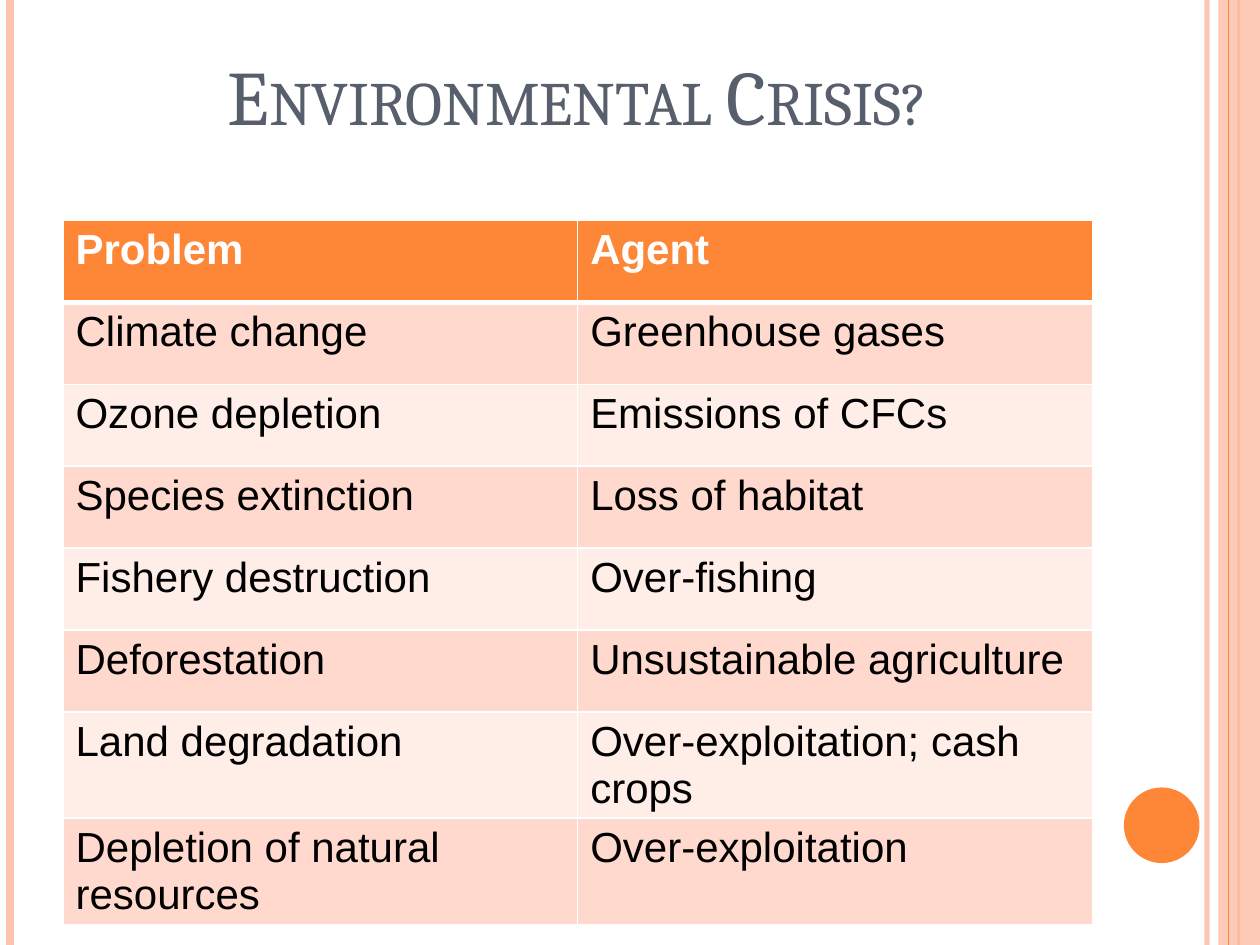
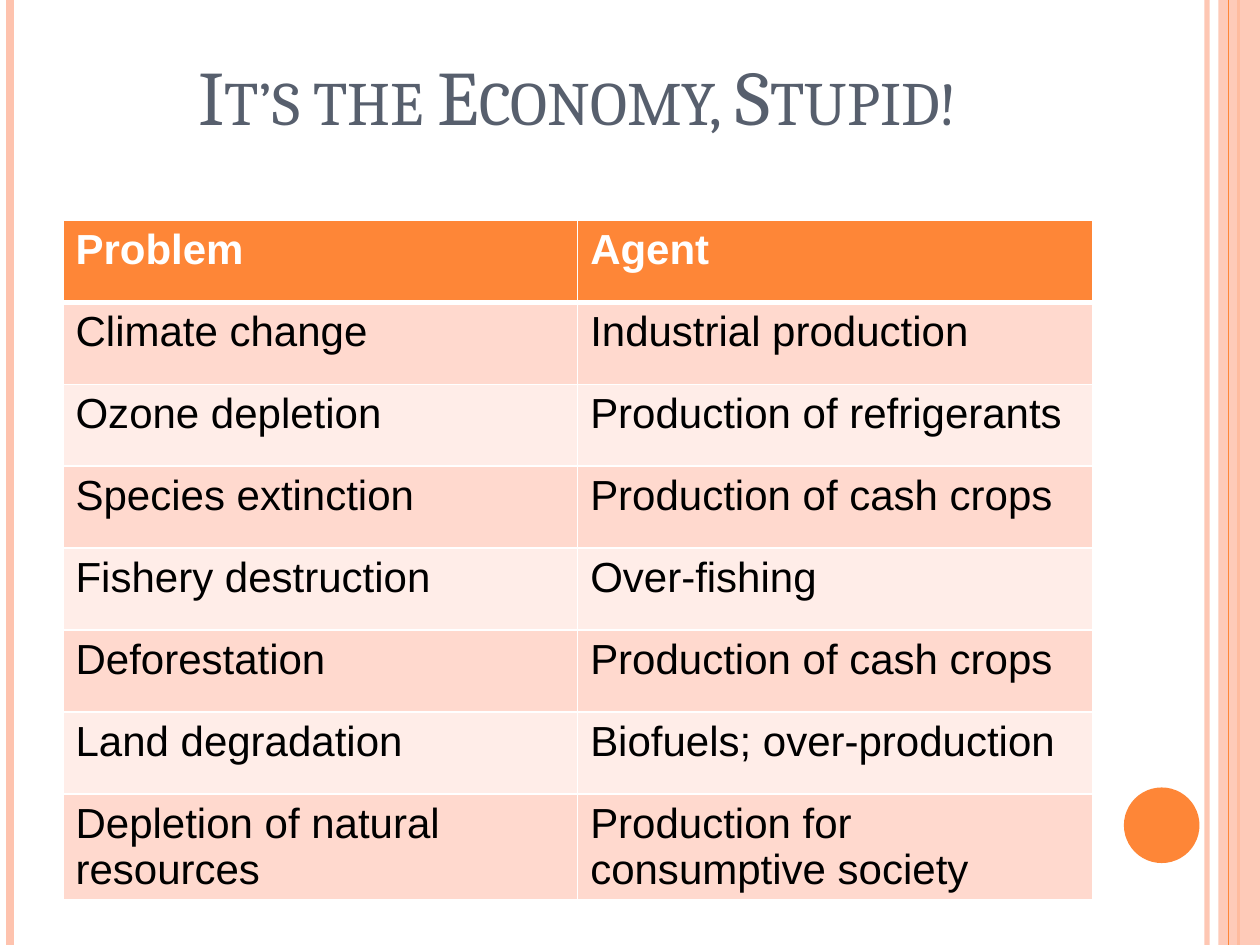
"""Build two slides that set environmental problems beside their agents."""
from lxml import etree
from pptx import Presentation
from pptx.dml.color import RGBColor
from pptx.enum import shapes, text
from pptx.oxml import ns
from pptx.util import Inches, Pt

ORANGE, PEACH, SLATE = "FE8637", "FEC3AE", "575F6D"
WHITE, BLACK = "FFFFFF", "000000"
BANDS = ("FFD9CE", "FFEDE8")
LEFT, CONTENT_WIDTH = 0.5, 8.17
SLIDE_WIDTH, SLIDE_HEIGHT = 10, 7.5
ROW_HEIGHT = 0.65

PROBLEMS = (
    "Climate change", "Ozone depletion", "Species extinction",
    "Fishery destruction", "Deforestation", "Land degradation",
    "Depletion of natural resources",
)
SLIDES = (
    ("Environmental Crisis?", (
        "Greenhouse gases", "Emissions of CFCs", "Loss of habitat",
        "Over-fishing", "Unsustainable agriculture",
        "Over-exploitation; cash crops", "Over-exploitation",
    )),
    ("It’s the Economy, Stupid!", (
        "Industrial production", "Production of refrigerants",
        "Production of cash crops", "Over-fishing",
        "Production of cash crops", "Biofuels; over-production",
        "Production for consumptive society",
    )),
)


def color(value):
    return RGBColor.from_string(value)


def set_opacity(shape, percent):
    for element in shape.element.spPr.iter(ns.qn("a:srgbClr")):
        etree.SubElement(element, ns.qn("a:alpha"), val=str(percent * 1000))


def write(frame, words, font="Arial", size=24, ink=BLACK, bold=False,
          align=text.PP_ALIGN.LEFT, small_caps=False):
    paragraph = frame.paragraphs[0]
    paragraph.alignment = align
    run = paragraph.add_run()
    run.text = words
    run.font.name = font
    run.font.size = Pt(size)
    run.font.bold = bold
    run.font.color.rgb = color(ink)
    if small_caps:
        run.font._element.set("cap", "small")


def add_stripe(slide, x, ink, width, opacity=100):
    line = slide.shapes.add_connector(
        shapes.MSO_CONNECTOR.STRAIGHT,
        Inches(x), Inches(0), Inches(x), Inches(SLIDE_HEIGHT))
    line.line.color.rgb = color(ink)
    line.line.width = Pt(width)
    etree.SubElement(line.element.spPr, ns.qn("a:effectLst"))
    if opacity < 100:
        set_opacity(line, opacity)


def add_plain_shape(slide, kind, left, top, width, height, fill, opacity=100):
    shape = slide.shapes.add_shape(
        kind, Inches(left), Inches(top), Inches(width), Inches(height))
    shape.shadow.inherit = False
    shape.fill.solid()
    shape.fill.fore_color.rgb = color(fill)
    shape.line.fill.background()
    if opacity < 100:
        set_opacity(shape, opacity)


def add_decoration(slide):
    add_stripe(slide, 9.58, PEACH, 3, opacity=93)
    add_stripe(slide, 0.08, PEACH, 4.5)
    add_stripe(slide, 9.83, ORANGE, 1.5)
    add_plain_shape(slide, shapes.MSO_SHAPE.RECTANGLE,
                    9.67, 0, 0.33, SLIDE_HEIGHT, PEACH, opacity=87)
    add_stripe(slide, 9.75, ORANGE, 0.75)
    add_plain_shape(slide, shapes.MSO_SHAPE.OVAL, 8.92, 6.25, 0.6, 0.6, ORANGE)


def set_title(slide, words):
    title = slide.shapes.title
    title.left, title.top = Inches(LEFT), Inches(0.3)
    title.width, title.height = Inches(CONTENT_WIDTH), Inches(0.87)
    frame = title.text_frame
    frame.auto_size = text.MSO_AUTO_SIZE.NONE
    frame.vertical_anchor = text.MSO_ANCHOR.BOTTOM
    write(frame, words, font="Cambria", size=44, ink=SLATE,
          align=text.PP_ALIGN.CENTER, small_caps=True)


def set_borders(cell, top=1, bottom=1):
    properties = cell._tc.get_or_add_tcPr()
    for side, width in (("L", 1), ("R", 1), ("T", top), ("B", bottom)):
        border = etree.SubElement(
            properties, ns.qn(f"a:ln{side}"), w=str(Pt(width)))
        fill = etree.SubElement(border, ns.qn("a:solidFill"))
        etree.SubElement(fill, ns.qn("a:srgbClr"), val=WHITE)


def add_problem_table(slide, agents):
    rows = [("Problem", "Agent"), *zip(PROBLEMS, agents)]
    table = slide.shapes.add_table(
        len(rows), 2, Inches(LEFT), Inches(1.75),
        Inches(CONTENT_WIDTH), Inches(ROW_HEIGHT * len(rows))).table
    table.horz_banding = False
    for row_index, row in enumerate(rows):
        header = row_index == 0
        for column_index, words in enumerate(row):
            cell = table.cell(row_index, column_index)
            set_borders(cell, top=3 if row_index == 1 else 1,
                        bottom=3 if header else 1)
            cell.fill.solid()
            cell.fill.fore_color.rgb = color(
                ORANGE if header else BANDS[(row_index - 1) % 2])
            write(cell.text_frame, words, bold=header,
                  ink=WHITE if header else BLACK)


def main():
    presentation = Presentation()
    presentation.slide_width = Inches(SLIDE_WIDTH)
    presentation.slide_height = Inches(SLIDE_HEIGHT)
    title_only = presentation.slide_layouts[5]
    for title, agents in SLIDES:
        slide = presentation.slides.add_slide(title_only)
        add_decoration(slide)
        set_title(slide, title)
        add_problem_table(slide, agents)
    presentation.save("out.pptx")


if __name__ == "__main__":
    main()
